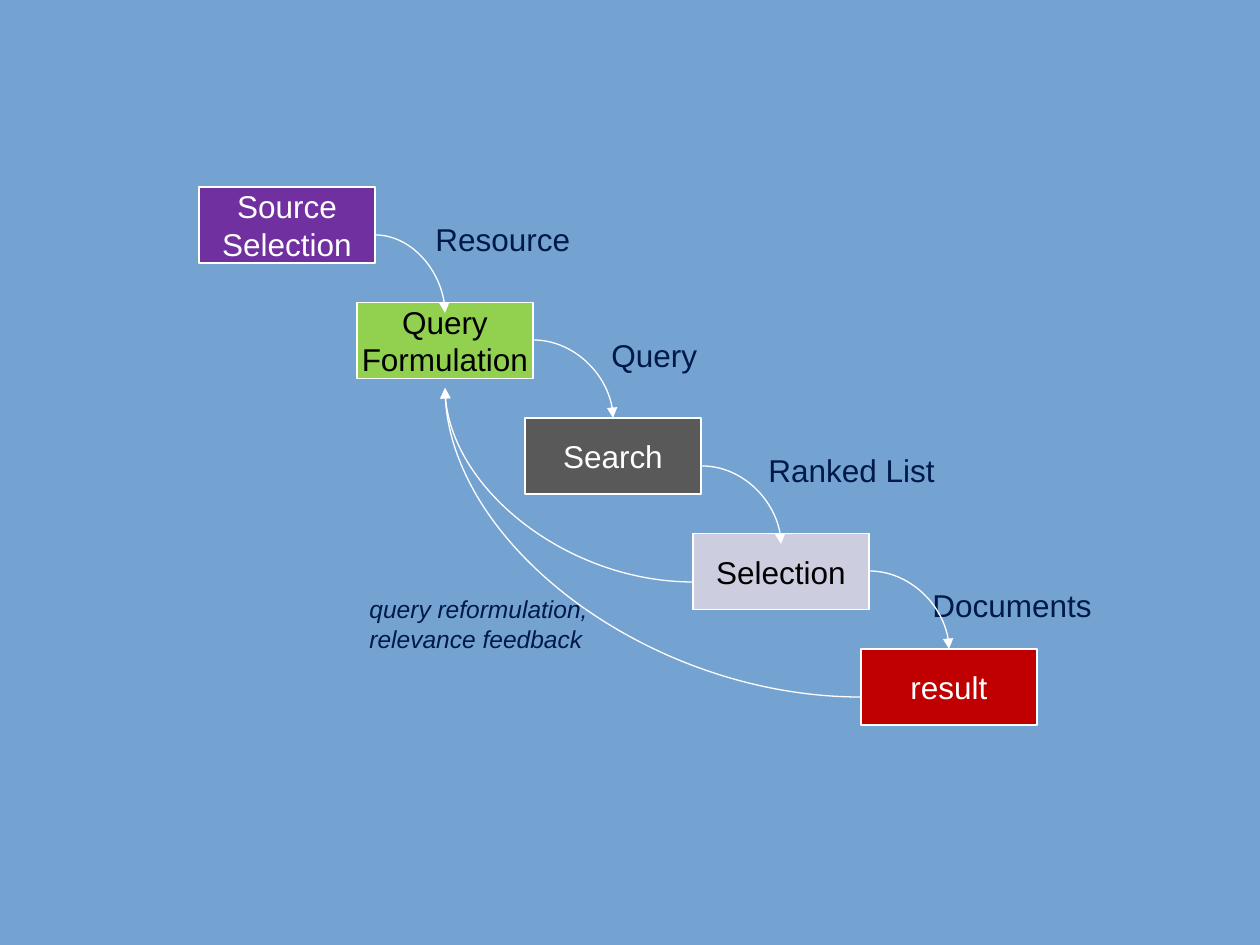
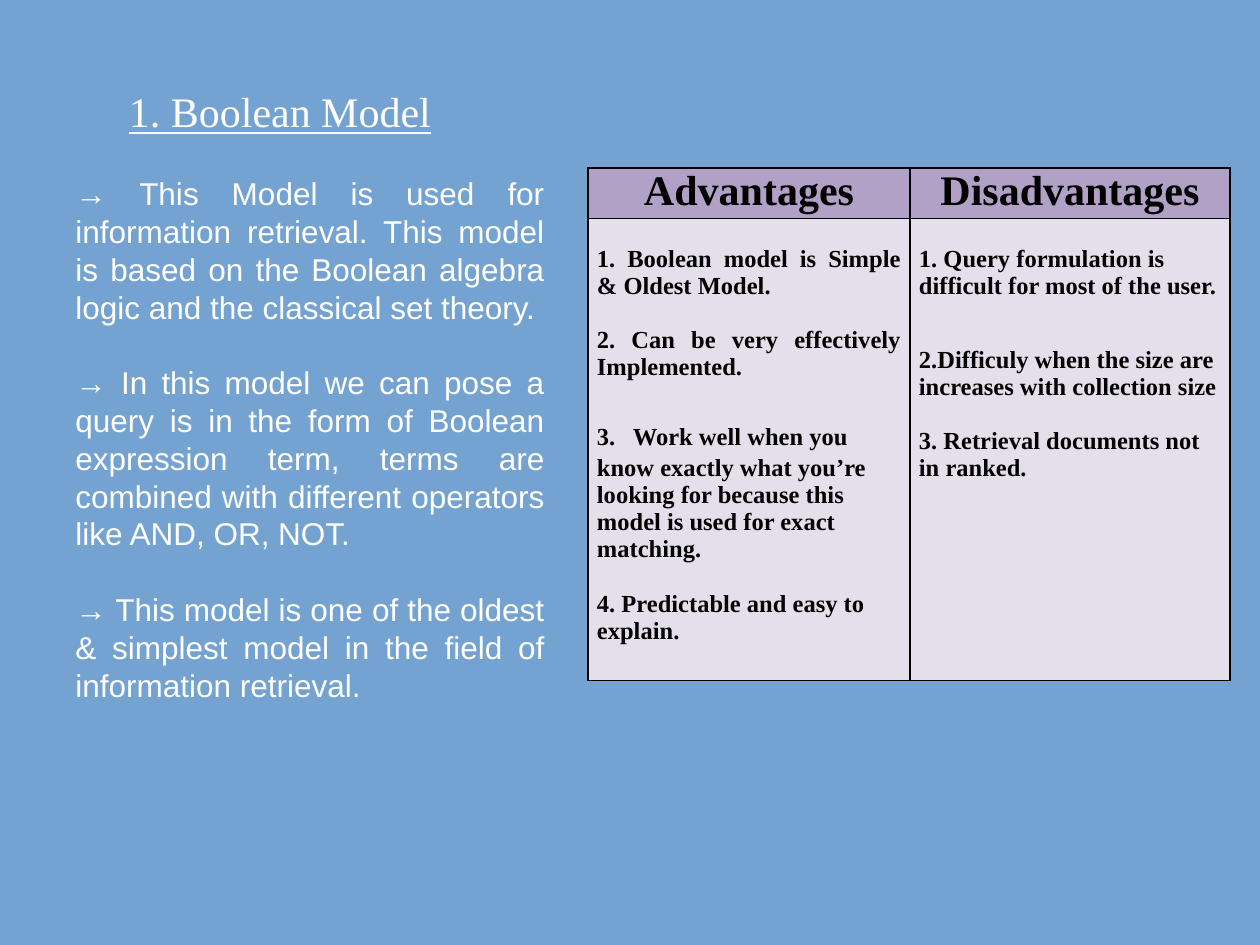
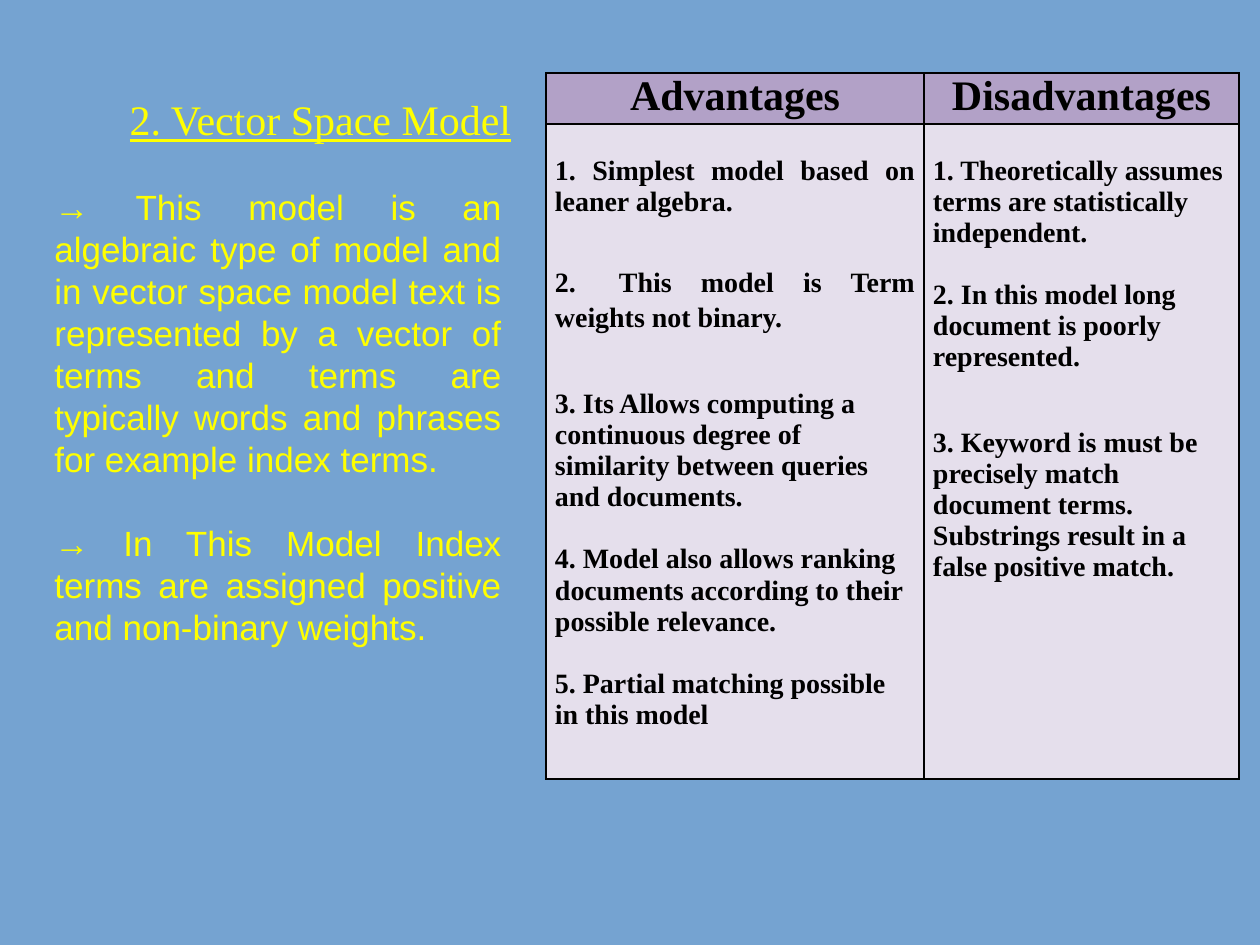
"""Builds three slides on information retrieval: the search process and two retrieval models."""
from lxml import etree
from pptx import Presentation
from pptx.dml.color import RGBColor
from pptx.enum.shapes import MSO_CONNECTOR, MSO_SHAPE
from pptx.enum.text import MSO_ANCHOR, MSO_AUTO_SIZE, PP_ALIGN
from pptx.oxml.ns import qn
from pptx.util import Emu, Pt

LEFT, CENTER, JUSTIFY = PP_ALIGN.LEFT, PP_ALIGN.CENTER, PP_ALIGN.JUSTIFY
MIDDLE = MSO_ANCHOR.MIDDLE
FIT, FIXED = MSO_AUTO_SIZE.SHAPE_TO_FIT_TEXT, MSO_AUTO_SIZE.NONE
RECTANGLE, CURVE = MSO_SHAPE.RECTANGLE, MSO_CONNECTOR.CURVE

EMU_PER_PX = 914400 / 126
SANS, SERIF = "Arial", "Times New Roman"
SKY, WHITE, BLACK, NAVY, YELLOW = "75A3D1", "FFFFFF", "000000", "00194C", "FFFF00"
HEADER_FILL, BODY_FILL = "B2A1C7", "E5DFEC"
SANS_LINE, SERIF_LINE = 1.2, 1.11
TITLE_ONLY, BLANK = 5, 6

STAGE_TOP, STAGE_STEP, STAGE_WIDTH, STAGE_HEIGHT = 187, 115.5, 176, 76
STAGES = [
    (199, ["Source", "Selection"], "7030A0", WHITE),
    (357, ["Query", "Formulation"], "92D050", BLACK),
    (525, ["Search"], "595959", WHITE),
    (693, ["Selection"], "CCCEDF", BLACK),
    (861, ["result"], "C00000", WHITE),
]
LABELS = [
    ((423, 214, 161, 50), ["Resource"], 18, False),
    ((599, 330, 126, 50), ["Query"], 18, False),
    ((756, 445, 193, 50), ["Ranked List"], 18, False),
    ((920, 580, 186, 50), ["Documents"], 18, False),
    ((357, 588, 244, 72), ["query reformulation,", "relevance feedback"], 14, True),
]
ARROWS = [
    ((375, 235), (445, 313)),
    ((533, 340), (613, 418)),
    ((702, 466), (781, 544)),
    ((869, 571), (949, 649)),
    ((861, 697), (445, 388)),
    ((693, 582), (445, 388)),
]

HEADINGS = ["Advantages", "Disadvantages"]
MODELS = [
    {
        "title": "1. Boolean Model", "title_box": (76, 53, 408, 116), "title_bottom": 6,
        "color": WHITE, "body_box": (63, 168, 494, 547), "body_size": 18,
        "body": [
            "→ This Model is used for information retrieval. This model is based on the "
            "Boolean algebra logic and the classical set theory.",
            "→ In this model we can pose a query is in the form of Boolean expression term, "
            "terms are combined with different operators like AND, OR, NOT.",
            "→ This model is one of the oldest & simplest model in the field of "
            "information retrieval.",
        ],
        "table_at": (588, 168), "columns": (322, 320), "rows": (50, 462),
        "cell_size": 14, "lead": (24, SERIF),
        "points": [
            [
                (0, JUSTIFY, "1. Boolean model is Simple & Oldest Model."),
                (14, JUSTIFY, "2. Can be very effectively Implemented."),
                (14, LEFT, "3. Work well when you know exactly what you’re looking for "
                           "because this model is used for exact matching."),
                (14, LEFT, "4. Predictable and easy to explain."),
            ],
            [
                (0, LEFT, "1. Query formulation is difficult for most of the user."),
                (24, LEFT, "2.Difficuly when the size are increases with collection size"),
                (14, LEFT, "3. Retrieval documents not in ranked."),
            ],
        ],
        "wide_lead": "3. Work",
    },
    {
        "title": "2. Vector Space Model", "title_box": (105, 84, 431, 116), "title_bottom": 52,
        "color": YELLOW, "body_box": (42, 179, 472, 479), "body_size": 20,
        "body": [
            "→ This model is an algebraic type of model and in vector space model text is "
            "represented by a vector of terms and terms are typically words and phrases "
            "for example index terms.",
            "→ In This Model Index terms are assigned positive and non-binary weights.",
        ],
        "table_at": (546, 73), "columns": (378, 315), "rows": (51, 655),
        "cell_size": 16, "lead": (28, SANS),
        "points": [
            [
                (0, JUSTIFY, "1. Simplest model based on leaner algebra."),
                (16, JUSTIFY, "2. This model is Term weights not binary."),
                (28, LEFT, "3. Its Allows computing a continuous degree of similarity "
                           "between queries and documents."),
                (16, LEFT, "4. Model also allows ranking documents according to their "
                           "possible relevance."),
                (16, LEFT, "5. Partial matching possible in this model"),
            ],
            [
                (0, LEFT, "1. Theoretically assumes terms are statistically independent."),
                (16, LEFT, "2. In this model long document is poorly represented."),
                (28, LEFT, "3. Keyword is must be precisely match document terms. "
                           "Substrings result in a false positive match."),
            ],
        ],
        "wide_lead": "2. This",
    },
]


def px(length):
    """Turn pixels into EMU."""
    return Emu(round(length * EMU_PER_PX))


def px_all(lengths):
    """Turn several pixel lengths into EMU."""
    return [px(length) for length in lengths]


def color(hex_code):
    """Turn a hex string into a colour."""
    return RGBColor.from_string(hex_code)


def style(font, size, name, hex_code):
    """Set the size, typeface and colour of a font."""
    font.size, font.name = Pt(size), name
    font.color.rgb = color(hex_code)


def next_paragraph(frame, index):
    """Return the first paragraph of a frame, or a new one after it."""
    return frame.add_paragraph() if index else frame.paragraphs[0]


def write_sans(frame, lines, size, hex_code, align=LEFT, gap=0, italic=False):
    """Write sans-serif paragraphs with even line spacing."""
    for index, line in enumerate(lines):
        para = next_paragraph(frame, index)
        para.text, para.alignment = line, align
        para.line_spacing = Pt(SANS_LINE * size)
        para.space_before = Pt(gap if index else 0)
        para.font.italic = italic
        style(para.font, size, SANS, hex_code)


def add_text(page, box, lines, size, hex_code, wrap=True, **options):
    """Add a text box that fits its paragraphs."""
    frame = page.shapes.add_textbox(*px_all(box)).text_frame
    frame.word_wrap, frame.auto_size = wrap, FIT
    write_sans(frame, lines, size, hex_code, **options)


def add_stage(page, index, left, lines, fill, text_color):
    """Add one step of the descending staircase."""
    box = (left, STAGE_TOP + index * STAGE_STEP, STAGE_WIDTH, STAGE_HEIGHT)
    stage = page.shapes.add_shape(RECTANGLE, *px_all(box))
    stage.shadow.inherit = False
    stage.fill.solid()
    stage.fill.fore_color.rgb = color(fill)
    stage.line.color.rgb, stage.line.width = color(WHITE), Pt(0.75)
    stage.text_frame.word_wrap = False
    stage.text_frame.vertical_anchor = MIDDLE
    write_sans(stage.text_frame, lines, 18, text_color, align=CENTER)


def add_arrow(page, start, end):
    """Add a quarter-turn arrow that leaves sideways and arrives vertically."""
    backward = end[0] < start[0]
    first, last = (end, start) if backward else (start, end)
    arrow = page.shapes.add_connector(CURVE, *px_all(first + last))
    arrow.line.color.rgb, arrow.line.width = color(WHITE), Pt(0.75)
    properties = arrow._element.spPr
    properties.find(qn("a:prstGeom")).set("prst", "curvedConnector2")
    if backward:
        properties.find(qn("a:xfrm")).set("rot", "10800000")
    etree.SubElement(properties.find(qn("a:ln")), qn("a:tailEnd"), type="triangle")
    etree.SubElement(properties, qn("a:effectLst"))


def format_cell(cell, fill):
    """Give a cell black borders, narrow margins and a fill."""
    properties = cell._tc.get_or_add_tcPr()
    for side in ("lnL", "lnR", "lnT", "lnB"):
        border = etree.SubElement(properties, qn(f"a:{side}"), w=str(Pt(1)))
        paint = etree.SubElement(border, qn("a:solidFill"))
        etree.SubElement(paint, qn("a:srgbClr"), val=BLACK)
    cell.margin_left = cell.margin_right = px(9)
    cell.margin_top = cell.margin_bottom = 0
    cell.fill.solid()
    cell.fill.fore_color.rgb = color(fill)


def write_serif(para, text, size, align):
    """Write one bold serif paragraph."""
    para.text, para.alignment = text, align
    para.font.bold = True
    style(para.font, size, SERIF, BLACK)


def widen_lead(para, text, size, lead):
    """Split a point after its number and put a larger space there."""
    number, rest = text.split(" ", 1)
    para.text = ""
    for part, part_size, name in ((number, size, SERIF), (" ", *lead), (rest, size, SERIF)):
        span = para.add_run()
        span.text, span.font.bold = part, True
        style(span.font, part_size, name, BLACK)
        if part == " ":
            span._r.get_or_add_rPr().set("spc", "400")


def add_points(page, model):
    """Add the table of advantages and disadvantages."""
    size = model["cell_size"]
    box = (*model["table_at"], sum(model["columns"]), sum(model["rows"]))
    table = page.shapes.add_table(2, 2, *px_all(box)).table
    for row, height in zip(table.rows, model["rows"]):
        row.height = px(height)
    for index, (heading, points) in enumerate(zip(HEADINGS, model["points"])):
        table.columns[index].width = px(model["columns"][index])
        head, body = table.cell(0, index), table.cell(1, index)
        format_cell(head, HEADER_FILL)
        write_serif(head.text_frame.paragraphs[0], heading, 24, CENTER)
        format_cell(body, BODY_FILL)
        body.margin_top = Pt(SERIF_LINE * size)
        for order, (gap, align, text) in enumerate(points):
            para = next_paragraph(body.text_frame, order)
            write_serif(para, text, size, align)
            para.space_before = Pt(SERIF_LINE * gap)
            if text.startswith(model["wide_lead"]):
                widen_lead(para, text, size, model["lead"])


def add_title(page, model):
    """Place and format the underlined title."""
    title = page.shapes.title
    title.left, title.top, title.width, title.height = px_all(model["title_box"])
    frame = title.text_frame
    frame.auto_size, frame.word_wrap, frame.vertical_anchor = FIXED, True, MIDDLE
    frame.margin_bottom = px(model["title_bottom"])
    para = frame.paragraphs[0]
    para.text, para.alignment = model["title"], CENTER
    para.font.underline = True
    style(para.font, 24, SERIF, model["color"])


def build_process(deck):
    """Build the staircase of the search process."""
    page = deck.slides.add_slide(deck.slide_layouts[BLANK])
    for index, stage in enumerate(STAGES):
        add_stage(page, index, *stage)
    for box, lines, size, italic in LABELS:
        add_text(page, box, lines, size, NAVY, wrap=False, italic=italic)
    for start, end in ARROWS:
        add_arrow(page, start, end)


def build_model(deck, model):
    """Build one slide about a retrieval model."""
    page = deck.slides.add_slide(deck.slide_layouts[TITLE_ONLY])
    add_title(page, model)
    size = model["body_size"]
    add_text(page, model["body_box"], model["body"], size, model["color"],
             align=JUSTIFY, gap=SANS_LINE * size)
    add_points(page, model)


def main():
    """Build and save the deck."""
    deck = Presentation()
    deck.slide_width, deck.slide_height = px(1260), px(945)
    background = deck.slide_master.background.fill
    background.solid()
    background.fore_color.rgb = color(SKY)
    build_process(deck)
    for model in MODELS:
        build_model(deck, model)
    deck.save("out.pptx")


if __name__ == "__main__":
    main()
